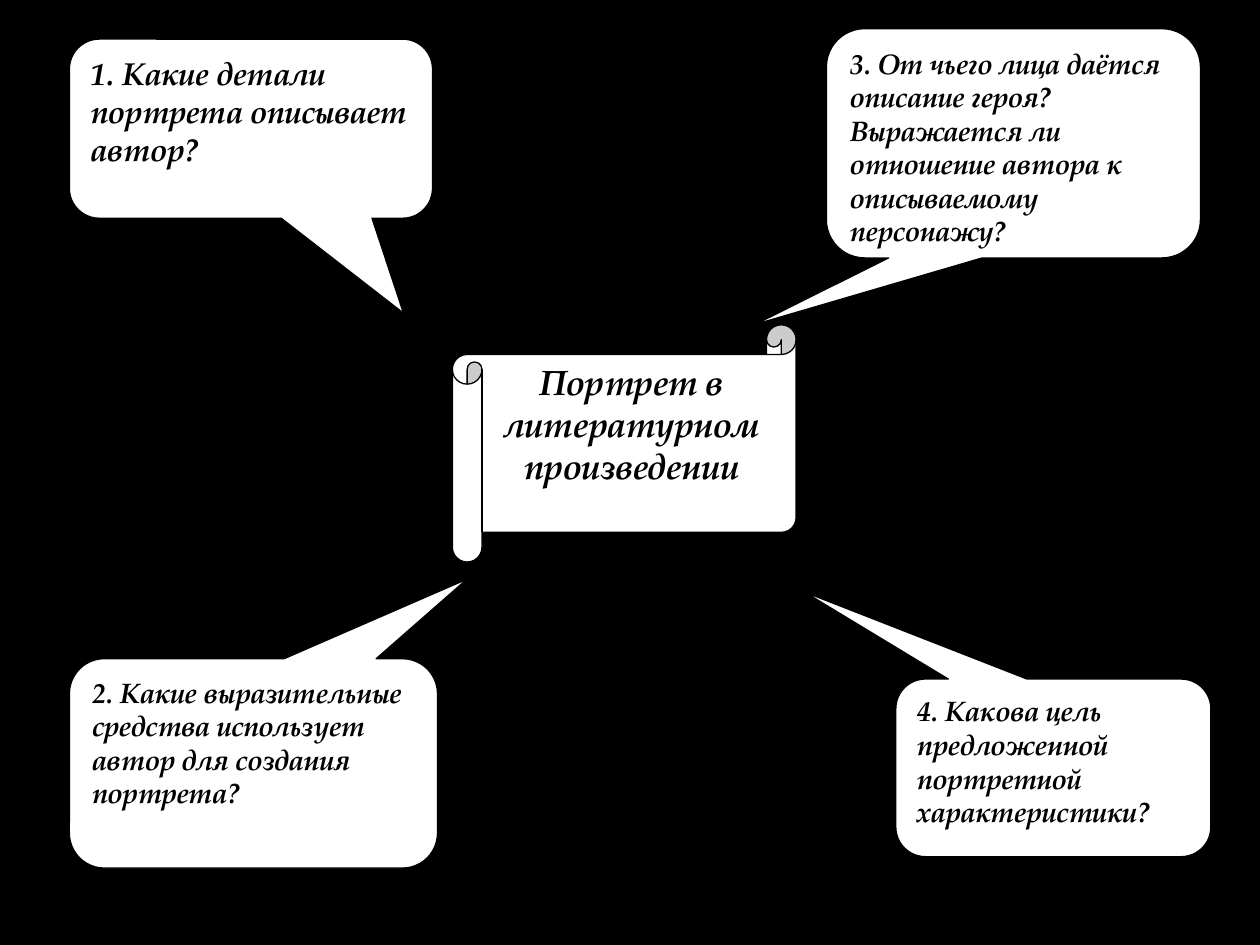
import pptx
import pptx.util
import pptx.dml.color
import pptx.enum.shapes
import pptx.enum.text

Cm = pptx.util.Cm
Pt = pptx.util.Pt
SHAPE = pptx.enum.shapes.MSO_SHAPE
ALIGN = pptx.enum.text.PP_ALIGN

COLORS = {"background": "000000", "paper": "FFFFFF", "ink": "000000"}
FONT = "TeX Gyre Pagella"
CORNER = 0.167


def color(name):
    return pptx.dml.color.RGBColor.from_string(COLORS[name])


class Painter:
    """Holds the style and the current page."""

    def __init__(self, page):
        self.page = page
        page.background.fill.solid()
        page.background.fill.fore_color.rgb = color("background")

    def panel(self, kind, place, adjustments, text, size, align):
        box = self.page.shapes.add_shape(kind, *[Cm(value) for value in place])
        for index, value in enumerate(adjustments):
            box.adjustments[index] = value
        box.shadow.inherit = False
        box.fill.solid()
        box.fill.fore_color.rgb = color("paper")
        box.line.color.rgb = color("ink")
        box.line.width = Pt(0.75)
        frame = box.text_frame
        frame.word_wrap = True
        frame.vertical_anchor = pptx.enum.text.MSO_ANCHOR.TOP
        para = frame.paragraphs[0]
        para.alignment = align
        para.space_after = Pt(10)
        span = para.add_run()
        span.text = text
        span.font.name = FONT
        span.font.size = Pt(size)
        span.font.bold = span.font.italic = True
        span.font.color.rgb = color("ink")

    def callout(self, place, tip, text, size=16):
        self.panel(SHAPE.ROUNDED_RECTANGULAR_CALLOUT, place, (*tip, CORNER),
                   text, size, ALIGN.LEFT)

    def scroll(self, place, text, size=20):
        self.panel(SHAPE.HORIZONTAL_SCROLL, place, (0.125,), text, size, ALIGN.CENTER)


def main():
    deck = pptx.Presentation()
    deck.slide_width, deck.slide_height = Cm(25.4), Cm(19.05)
    painter = Painter(deck.slides.add_slide(deck.slide_layouts[6]))

    # Central topic
    painter.scroll((9.12, 6.55, 6.93, 4.78), "Портрет в литературном произведении")

    # Questions around it, with tips pointing to the topic
    painter.callout((1.4, 0.79, 7.32, 3.61), (0.42, 1.03),
                    "1. Какие детали портрета описывает автор?", size=18)
    painter.callout((1.4, 13.28, 7.42, 4.22), (0.58, -0.88),
                    "2. Какие выразительные средства использует автор "
                    "для создания портрета?")
    painter.callout((16.66, 0.58, 7.54, 4.62), (-0.69, 0.79),
                    "3. От чьего лица даётся описание героя? Выражается ли "
                    "отношение автора к описываемому персонажу?")
    painter.callout((18.06, 13.69, 6.35, 3.58), (-0.79, -0.99),
                    "4. Какова цель предложенной портретной характеристики?")

    deck.save("out.pptx")


if __name__ == "__main__":
    main()
